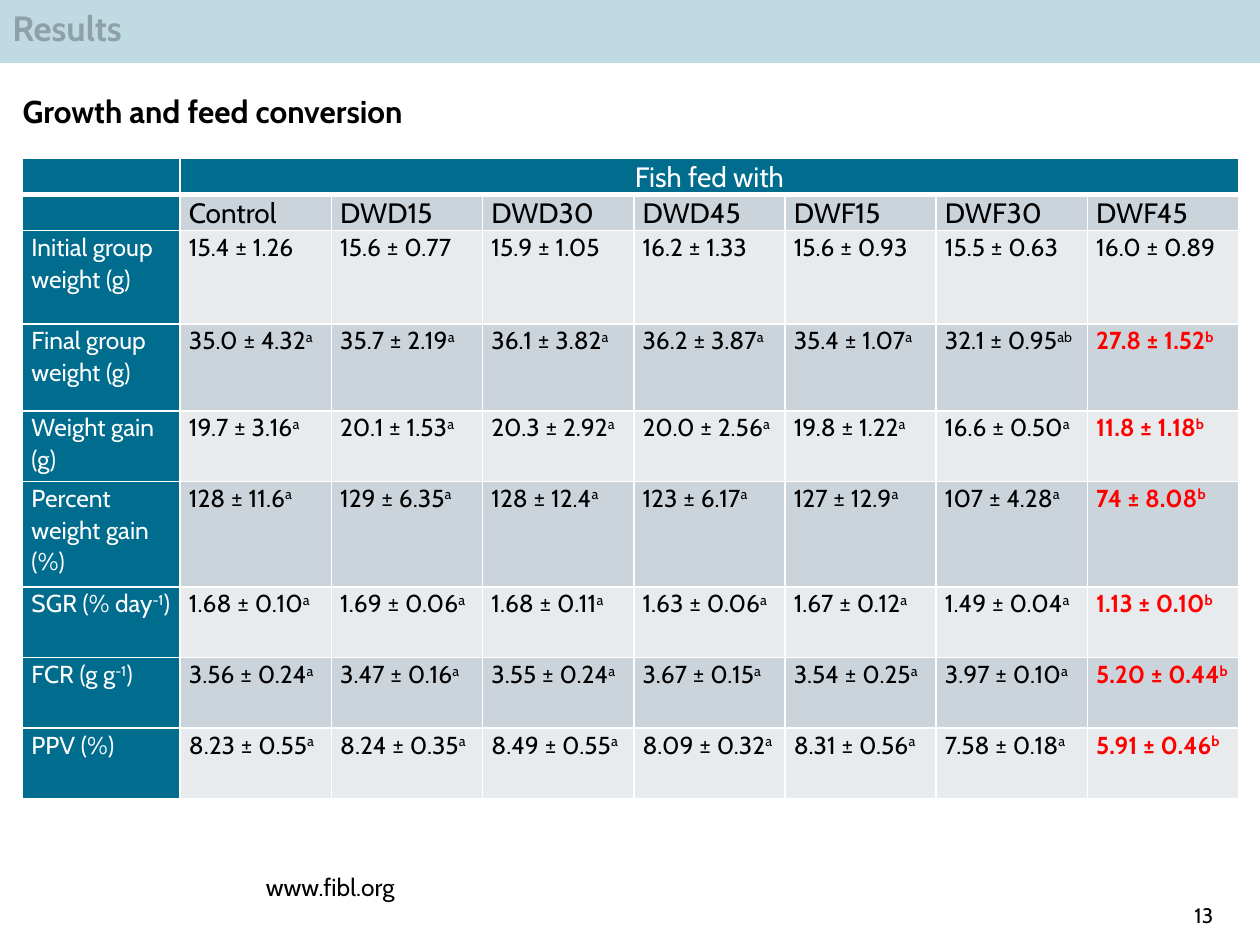
from lxml.etree import SubElement
from pptx import Presentation
from pptx.dml.color import RGBColor
from pptx.enum.shapes import MSO_SHAPE
from pptx.enum.text import MSO_ANCHOR, MSO_AUTO_SIZE, PP_ALIGN
from pptx.oxml.ns import qn
from pptx.util import Inches, Pt

COLORS = {"teal": "006C8E", "dark": "CCD4DB", "light": "E7EBEE",
          "white": "FFFFFF", "black": "000000", "red": "FF0000"}
FONT = "Cabin"
BANNER = "Results"
HEADING = "Growth and feed conversion"
WEBSITE = "www.fibl.org"
PAGE_NUMBER = "13"
GROUP_HEADER = "Fish fed with"
DIETS = ["", "Control", "DWD15", "DWD30", "DWD45", "DWF15", "DWF30", "DWF45"]
RESULTS = [
    ["Initial group weight (g)", "15.4 ± 1.26", "15.6 ± 0.77", "15.9 ± 1.05",
     "16.2 ± 1.33", "15.6 ± 0.93", "15.5 ± 0.63", "16.0 ± 0.89"],
    ["Final group weight (g)", "35.0 ± 4.32^a", "35.7 ± 2.19^a", "36.1 ± 3.82^a",
     "36.2 ± 3.87^a", "35.4 ± 1.07^a", "32.1 ± 0.95^ab", "27.8 ± 1.52^b"],
    ["Weight gain (g)", "19.7 ± 3.16^a", "20.1 ± 1.53^a", "20.3 ± 2.92^a",
     "20.0 ± 2.56^a", "19.8 ± 1.22^a", "16.6 ± 0.50^a", "11.8 ± 1.18^b"],
    ["Percent weight gain (%)", "128 ± 11.6^a", "129 ± 6.35^a", "128 ± 12.4^a",
     "123 ± 6.17^a", "127 ± 12.9^a", "107 ± 4.28^a", "74 ± 8.08^b"],
    ["SGR (% day^-1^)", "1.68 ± 0.10^a", "1.69 ± 0.06^a", "1.68 ± 0.11^a",
     "1.63 ± 0.06^a", "1.67 ± 0.12^a", "1.49 ± 0.04^a", "1.13 ± 0.10^b"],
    ["FCR (g g^-1^)", "3.56 ± 0.24^a", "3.47 ± 0.16^a", "3.55 ± 0.24^a",
     "3.67 ± 0.15^a", "3.54 ± 0.25^a", "3.97 ± 0.10^a", "5.20 ± 0.44^b"],
    ["PPV (%)", "8.23 ± 0.55^a", "8.24 ± 0.35^a", "8.49 ± 0.55^a",
     "8.09 ± 0.32^a", "8.31 ± 0.56^a", "7.58 ± 0.18^a", "5.91 ± 0.46^b"],
]
ROWS = [["", GROUP_HEADER] + [""] * 6, DIETS] + RESULTS
ROW_HEIGHTS = [0.27, 0.27, 0.74, 0.69, 0.56, 0.84, 0.56, 0.56, 0.56]
COLUMN_WIDTHS = [1.25] + [1.2] * 7


def apply(target, **values):
    for name, value in values.items():
        setattr(target, name, value)


def color(name):
    return RGBColor.from_string(COLORS[name])


def set_alpha(fill_owner, percent):
    tint = next(fill_owner.iter(qn("a:srgbClr")))
    SubElement(tint, qn("a:alpha")).set("val", str(percent * 1000))


def write(frame, text, size, ink="black", bold=False, align=PP_ALIGN.LEFT, spacing=None):
    """Fill the first paragraph; parts between carets become superscripts."""
    para = frame.paragraphs[0]
    apply(para, alignment=align, line_spacing=spacing)
    for index, part in enumerate(text.split("^")):
        if part:
            span = para.add_run()
            span.text = part
            apply(span.font, name=FONT, size=Pt(size), bold=bold)
            span.font.color.rgb = color(ink)
            if index % 2:
                span.font._element.set("baseline", "30000")
    if not text:
        para._p.get_or_add_endParaRPr().set("sz", str(size * 100))
    return para


def place(box, left, top, width, height):
    apply(box, left=Inches(left), top=Inches(top), width=Inches(width), height=Inches(height))


def add_banner(page):
    banner = page.shapes.add_shape(MSO_SHAPE.RECTANGLE, 0, 0, Inches(10), Inches(0.5))
    banner.shadow.inherit = False
    banner.fill.solid()
    banner.fill.fore_color.rgb = color("teal")
    set_alpha(banner._element.spPr, 25)
    banner.line.fill.background()
    banner.text_frame.vertical_anchor = MSO_ANCHOR.TOP
    para = write(banner.text_frame, BANNER, 20, bold=True)
    set_alpha(para._p, 25)


def add_heading(page):
    title = page.shapes.title
    place(title, 0.08, 0.68, 9.43, 0.4)
    apply(title.text_frame, vertical_anchor=MSO_ANCHOR.TOP, auto_size=MSO_AUTO_SIZE.NONE,
          word_wrap=True)
    write(title.text_frame, HEADING, 18, bold=True)


def add_footer(page, text, size, align, area):
    box = page.shapes.add_textbox(*map(Inches, area))
    apply(box.text_frame, word_wrap=True, vertical_anchor=MSO_ANCHOR.BOTTOM,
          margin_left=0, margin_right=0)
    return write(box.text_frame, text, size, align=align)


def add_borders(cell, row):
    properties = cell._tc.get_or_add_tcPr()
    for side in "LRTB":
        thick = (row, side) in ((0, "B"), (1, "T"))
        line = SubElement(properties, qn(f"a:ln{side}"), w=str(Pt(3 if thick else 1)))
        fill = SubElement(line, qn("a:solidFill"))
        SubElement(fill, qn("a:srgbClr"), val=COLORS["white"])


def format_cell(cell, row, column, text):
    header = row == 0 or column == 0
    effect = text.endswith("^b")
    ink = "white" if header else "red" if effect else "black"
    background = "teal" if header else "dark" if row % 2 else "light"
    apply(cell, margin_left=Inches(0.07), margin_right=Inches(0.07),
          margin_top=0, margin_bottom=0, vertical_anchor=MSO_ANCHOR.TOP)
    add_borders(cell, row)
    cell.fill.solid()
    cell.fill.fore_color.rgb = color(background)
    write(cell.text_frame, text, 16 if row < 2 else 14, ink, effect,
          PP_ALIGN.CENTER if row == 0 else PP_ALIGN.LEFT, 1.07)


def add_results_table(page):
    frame = page.shapes.add_table(len(ROWS), len(COLUMN_WIDTHS), Inches(0.18), Inches(1.26),
                                  Inches(sum(COLUMN_WIDTHS)), Inches(sum(ROW_HEIGHTS)))
    table = frame.table
    for column, width in zip(table.columns, COLUMN_WIDTHS):
        column.width = Inches(width)
    for row, height in zip(table.rows, ROW_HEIGHTS):
        row.height = Inches(height)
    for row, texts in enumerate(ROWS):
        for column, text in enumerate(texts):
            format_cell(table.cell(row, column), row, column, text)
    table.cell(0, 1).merge(table.cell(0, len(COLUMN_WIDTHS) - 1))


def main():
    deck = Presentation()
    apply(deck, slide_width=Inches(10), slide_height=Inches(7.5))
    page = deck.slides.add_slide(deck.slide_layouts[5])
    add_footer(page, WEBSITE, 14, PP_ALIGN.LEFT, (2.11, 6.86, 2.99, 0.34))
    add_footer(page, PAGE_NUMBER, 12, PP_ALIGN.RIGHT, (9.07, 7.1, 0.56, 0.31))
    add_banner(page)
    add_results_table(page)
    add_heading(page)
    deck.save("out.pptx")


if __name__ == "__main__":
    main()
